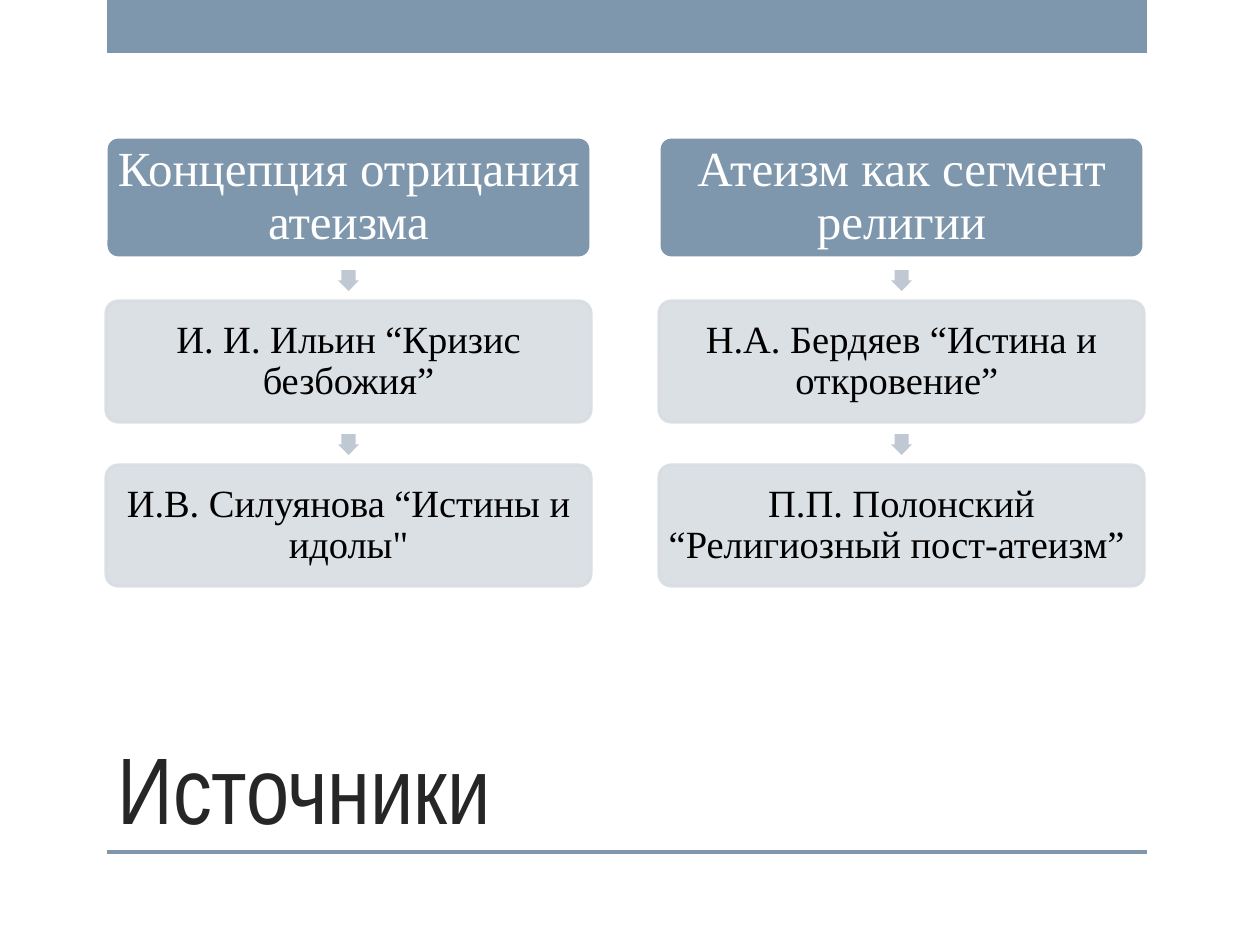
import pptx
import pptx.util
import pptx.dml.color
import pptx.enum.shapes
import pptx.enum.text
import pptx.oxml.ns
import lxml.etree

# Content
TITLE = "Источники"
COLS = [
    ["Концепция отрицания атеизма",
     "И. И. Ильин “Кризис безбожия”",
     "И.В. Силуянова “Истины и идолы\""],
    ["Атеизм как сегмент религии",
     "Н.А. Бердяев “Истина и откровение” ",
     "П.П. Полонский “Религиозный пост-атеизм” "],
]

# Looks
BLUE, PALE, GREY = "7E97AD", "D8DDE3", "C0C9D3"
HEAD = dict(fill=BLUE, line="FFFFFF", alpha=None, size=28, ink="FFFFFF", pad=5)
ITEM = dict(fill=PALE, line=PALE, alpha=90, size=22, ink="000000", pad=4)

# Layout in px
LEFT, TOP, WIDE, HIGH = 106, 137, 485, 121
COL_STEP, ROW_STEP, ARROW = 553, 164, 21

KIND = pptx.enum.shapes.MSO_SHAPE
ALIGN = pptx.enum.text.PP_ALIGN
ANCHOR = pptx.enum.text.MSO_ANCHOR


def px(n):
    return round(n * 914400 / 126)


def rgb(code):
    return pptx.dml.color.RGBColor.from_string(code)


def paint(part, code, alpha=None):
    """Give a fill one colour, with opacity in percent."""
    part.solid()
    part.fore_color.rgb = rgb(code)
    if alpha:
        # The colour element sits in the fill of the shape or its line
        return str(alpha * 1000)


def fade(shape, alpha):
    tag = pptx.oxml.ns.qn("a:srgbClr")
    for tint in shape.element.spPr.iter(tag):
        lxml.etree.SubElement(tint, pptx.oxml.ns.qn("a:alpha"), val=str(alpha * 1000))


def draw(kind, x, y, w, h, fill, line=None, alpha=None, adj=()):
    shape = slide.shapes.add_shape(kind, *map(px, (x, y, w, h)))
    shape.shadow.inherit = False
    paint(shape.fill, fill)
    if line:
        paint(shape.line.fill, line)
        shape.line.width = pptx.util.Pt(1.75)
    else:
        shape.line.fill.background()
    for i, val in enumerate(adj):
        shape.adjustments[i] = val
    if alpha:
        fade(shape, alpha)
    return shape


def write(shape, text, font, size, ink, frame, para):
    body = shape.text_frame
    line = body.paragraphs[0]
    run = line.add_run()
    run.text = text
    looks = dict(name=font, size=pptx.util.Pt(size))
    for part, vals in ((body, frame), (line, para), (run.font, looks)):
        for key, val in vals.items():
            setattr(part, key, val)
    run.font.color.rgb = rgb(ink)


deck = pptx.Presentation()
deck.slide_width, deck.slide_height = px(1260), px(945)
slide = deck.slides.add_slide(deck.slide_layouts[6])

# Bands at top and bottom
for y, h in ((0, 53), (850, 4)):
    draw(KIND.RECTANGLE, 107, y, 1040, h, BLUE)

# Title
box = slide.shapes.add_textbox(*map(px, (105, 630, 935, 220)))
write(box, TITLE, "Arial Narrow", 54, "262626",
      dict(word_wrap=True, vertical_anchor=ANCHOR.BOTTOM),
      dict(alignment=ALIGN.LEFT))

# Two columns of boxes joined by arrows
for c, col in enumerate(COLS):
    x = LEFT + c * COL_STEP
    for r, text in enumerate(col):
        y = TOP + r * ROW_STEP
        look = ITEM if r else HEAD
        if r:
            gap = ROW_STEP - HIGH
            arrow = draw(KIND.RIGHT_ARROW, x + (WIDE - ARROW) / 2,
                         y - (gap + ARROW) / 2 + 1, ARROW, ARROW,
                         GREY, adj=(0.67, 0.5))
            arrow.rotation = 90
        card = draw(KIND.ROUNDED_RECTANGLE, x, y, WIDE, HIGH,
                    look["fill"], look["line"], look["alpha"], (0.1,))
        frame = dict(word_wrap=True, vertical_anchor=ANCHOR.MIDDLE)
        for side in ("left", "right", "top", "bottom"):
            frame["margin_" + side] = px(look["pad"])
        write(card, text, "Times New Roman", look["size"], look["ink"],
              frame, dict(alignment=ALIGN.CENTER, line_spacing=0.9))

deck.save("out.pptx")
